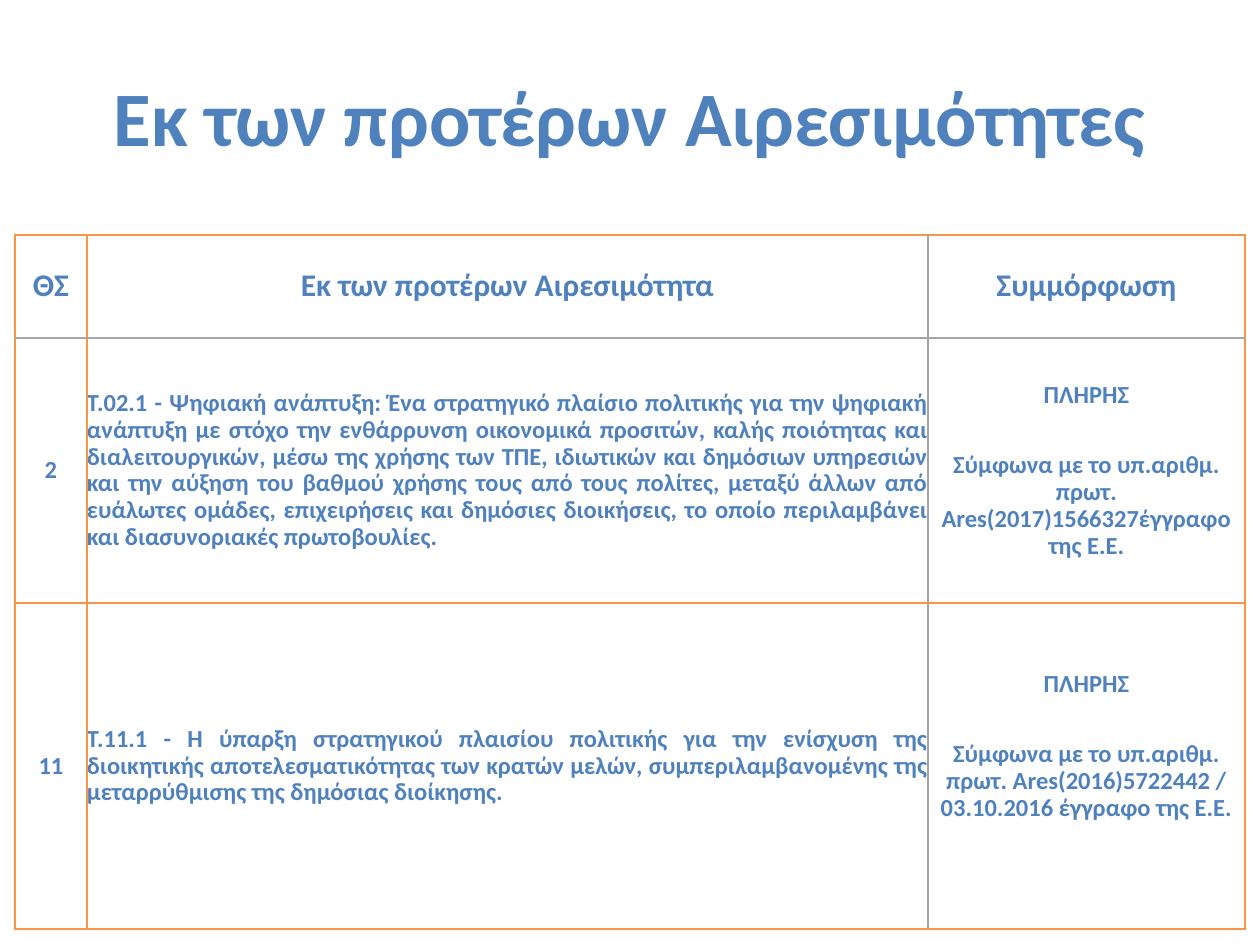
from lxml.etree import SubElement as Sub
from pptx import Presentation as Deck
from pptx.dml.color import RGBColor as Rgb
from pptx.enum.text import MSO_ANCHOR as Anchor, PP_ALIGN as Align
from pptx.oxml.ns import qn
from pptx.util import Emu, Pt

BLUE, ORANGE, GREY, WHITE = "4F81BD", "F79646", "A6A6A6", "FFFFFF"
COLS = [72, 841, 317]
ROWS = [103, 265, 326]
CELLS = [
    [["ΘΣ"], ["Εκ των προτέρων Αιρεσιμότητα"], ["Συμμόρφωση"]],
    [["2"],
     ["T.02.1 - Ψηφιακή ανάπτυξη: Ένα στρατηγικό πλαίσιο πολιτικής για την "
      "ψηφιακή ανάπτυξη με στόχο την ενθάρρυνση οικονομικά προσιτών, καλής "
      "ποιότητας και διαλειτουργικών, μέσω της χρήσης των ΤΠΕ, ιδιωτικών και "
      "δημόσιων υπηρεσιών και την αύξηση του βαθμού χρήσης τους από τους "
      "πολίτες, μεταξύ άλλων από ευάλωτες ομάδες, επιχειρήσεις και δημόσιες "
      "διοικήσεις, το οποίο περιλαμβάνει και διασυνοριακές πρωτοβουλίες."],
     ["ΠΛΗΡΗΣ",
      "Σύμφωνα με το υπ.αριθμ. πρωτ. Ares(2017)1566327έγγραφο της Ε.Ε."]],
    [["11"],
     ["T.11.1 - Η ύπαρξη στρατηγικού πλαισίου πολιτικής για την ενίσχυση της "
      "διοικητικής αποτελεσματικότητας των κρατών μελών, "
      "συμπεριλαμβανομένης της μεταρρύθμισης της δημόσιας διοίκησης."],
     ["ΠΛΗΡΗΣ",
      "Σύμφωνα με το υπ.αριθμ. πρωτ. Ares(2016)5722442 / 03.10.2016 "
      "έγγραφο της Ε.Ε."]],
]


def px(n):
    return Emu(round(n * 914400 / 126))


def color(code):
    return Rgb.from_string(code)


def style(para, size, align=Align.CENTER):
    para.alignment = align
    for run in para.runs:
        font = run.font
        font.name, font.size, font.bold = "Calibri", Pt(size), True
        font.color.rgb = color(BLUE)


def border(cell, hues):
    props = cell._tc.get_or_add_tcPr()
    for spot, (side, hue) in enumerate(zip("LRTB", hues)):
        line = Sub(props, qn(f"a:ln{side}"), w=str(Pt(1)))
        fill = Sub(line, qn("a:solidFill"))
        Sub(fill, qn("a:srgbClr"), val=hue)
        props.insert(spot, line)


def add_title(slide, left, top, width, height):
    box = slide.shapes.add_textbox(px(left), px(top), px(width), px(height))
    frame = box.text_frame
    frame.word_wrap = True
    frame.vertical_anchor = Anchor.MIDDLE
    frame.text = "Εκ των προτέρων Αιρεσιμότητες"
    style(frame.paragraphs[0], 44)


def fill_cell(cell, lines, size, align):
    cell.fill.solid()
    cell.fill.fore_color.rgb = color(WHITE)
    cell.vertical_anchor = Anchor.MIDDLE
    cell.margin_left = cell.margin_right = 0
    cell.margin_top = cell.margin_bottom = 0
    frame = cell.text_frame
    frame.text = "\n".join(lines)
    for para in frame.paragraphs:
        style(para, size, align)
        para.line_spacing = 0.9
    for para in frame.paragraphs[1:]:
        para.space_before = Pt(25)


def add_grid(slide, left, top):
    shape = slide.shapes.add_table(len(ROWS), len(COLS), px(left), px(top),
                                   px(sum(COLS)), px(sum(ROWS)))
    table = shape.table
    table.first_row = table.horz_banding = False
    for col, width in zip(table.columns, COLS):
        col.width = px(width)
    for row, height in zip(table.rows, ROWS):
        row.height = px(height)
    for r, row in enumerate(CELLS):
        for c, lines in enumerate(row):
            cell = table.cell(r, c)
            align = Align.JUSTIFY if r and c == 1 else Align.CENTER
            fill_cell(cell, lines, 14 if r else 18, align)
            border(cell, [GREY if soft else ORANGE
                          for soft in (c == 2, c == 1, r == 1, r == 0)])
    table.cell(2, 2).margin_bottom = px(39)


def main():
    deck = Deck()
    deck.slide_width, deck.slide_height = px(1260), px(945)
    slide = deck.slides.add_slide(deck.slide_layouts[6])
    add_title(slide, 63, 38, 1134, 156)
    add_grid(slide, 15, 235)
    deck.save("out.pptx")


if __name__ == "__main__":
    main()
